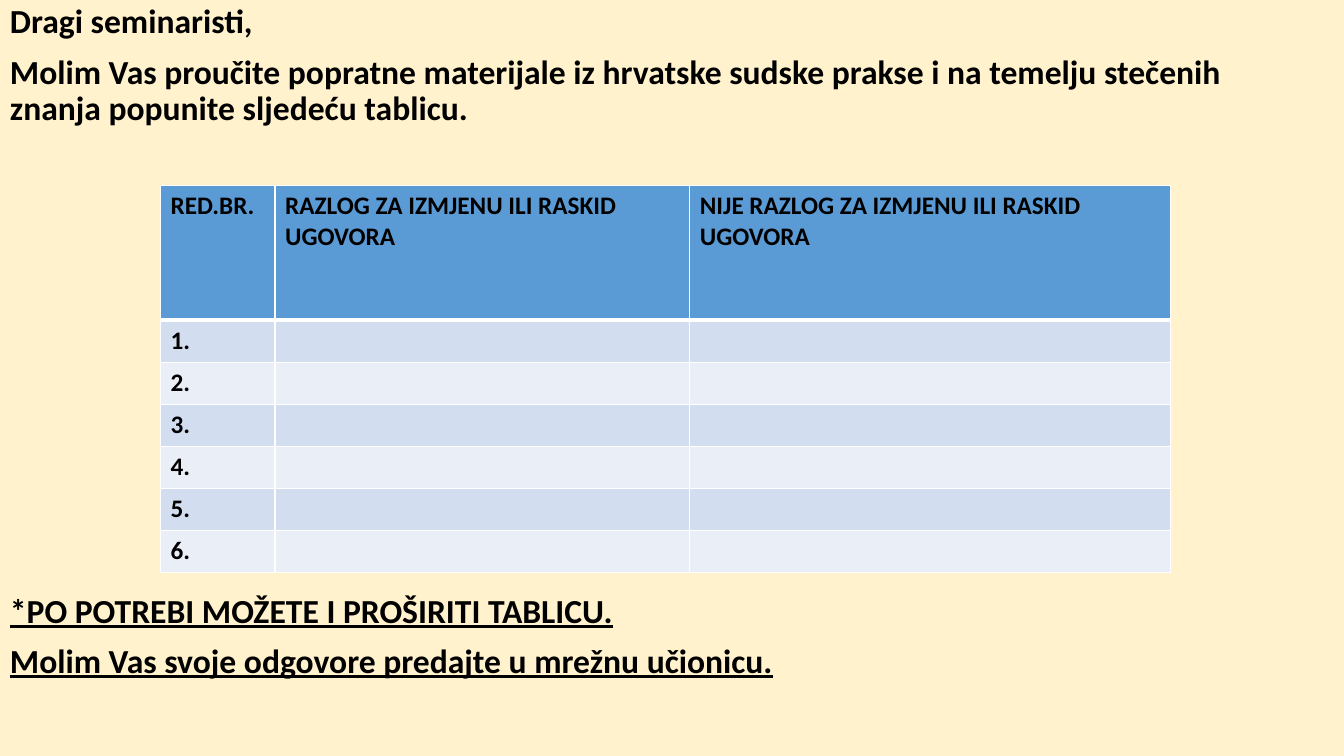
from dataclasses import dataclass

from lxml import etree
from pptx import Presentation
from pptx import util as u
from pptx.dml.color import RGBColor
from pptx.oxml.ns import qn

PX = 9525  # EMU per px, 96 px to the inch


@dataclass(frozen=True)
class Theme:
    font: str = "Calibri"
    ink: str = "000000"
    background: str = "FFF2CC"
    header: str = "5B9BD5"
    bands: tuple = ("D2DEEF", "EAEFF7")
    border: str = "FFFFFF"
    body_size: int = 24
    table_size: int = 18
    thin: int = 1
    thick: int = 3


class SlideBuilder:
    def __init__(self, page, theme):
        self.page = page
        self.theme = theme
        fill = page.background.fill
        fill.solid()
        fill.fore_color.rgb = RGBColor.from_string(theme.background)

    def style(self, para, size, underline=None):
        font = para.font
        font.name = self.theme.font
        font.size = u.Pt(size)
        font.bold = True
        font.underline = underline
        font.color.rgb = RGBColor.from_string(self.theme.ink)

    def text(self, left, top, width, height, lines, underline=None):
        box = self.page.shapes.add_textbox(*(n * PX for n in (left, top, width, height)))
        frame = box.text_frame
        frame.word_wrap = True
        frame.text = "\n".join(lines)
        for index, para in enumerate(frame.paragraphs):
            para.line_spacing = 0.9
            para.space_before = u.Pt(10 if index else 0)
            self.style(para, self.theme.body_size, underline)

    def borders(self, cell, top, bottom):
        """Draw all four sides, with the top and bottom widths in points."""
        thin = self.theme.thin
        properties = cell._tc.get_or_add_tcPr()
        for side, width in (("L", thin), ("R", thin), ("T", top), ("B", bottom)):
            line = etree.SubElement(properties, qn(f"a:ln{side}"), w=str(u.Pt(width)))
            fill = etree.SubElement(line, qn("a:solidFill"))
            etree.SubElement(fill, qn("a:srgbClr"), val=self.theme.border)

    def table(self, left, top, columns, rows, content):
        theme = self.theme
        size = (left, top, sum(columns), sum(rows))
        table = self.page.shapes.add_table(
            len(rows), len(columns), *(n * PX for n in size)).table
        for column, width in zip(table.columns, columns):
            column.width = width * PX
        for index, (row, height, words) in enumerate(zip(table.rows, rows, content)):
            row.height = height * PX
            color = theme.bands[(index - 1) % 2] if index else theme.header
            for cell, word in zip(row.cells, words):
                self.borders(cell,
                             theme.thick if index == 1 else theme.thin,
                             theme.thick if index == 0 else theme.thin)
                cell.fill.solid()
                cell.fill.fore_color.rgb = RGBColor.from_string(color)
                cell.text = word
                self.style(cell.text_frame.paragraphs[0], theme.table_size)


def main():
    deck = Presentation()
    deck.slide_width, deck.slide_height = 1280 * PX, 720 * PX
    builder = SlideBuilder(deck.slides.add_slide(deck.slide_layouts[6]), Theme())

    builder.text(0, 0, 1236, 130, [
        "Dragi seminaristi,",
        "Molim Vas proučite popratne materijale iz hrvatske sudske prakse "
        "i na temelju stečenih znanja popunite sljedeću tablicu.",
    ])
    headings = ["RED.BR.", "RAZLOG ZA IZMJENU ILI RASKID UGOVORA",
                "NIJE RAZLOG ZA IZMJENU ILI RASKID UGOVORA"]
    entries = [[f"{number}.", "", ""] for number in range(1, 7)]
    builder.table(153, 177, [109, 395, 458], [128] + [40] * len(entries),
                  [headings] + entries)
    builder.text(0, 561, 1236, 100, [
        "*PO POTREBI MOŽETE I PROŠIRITI TABLICU.",
        "Molim Vas svoje odgovore predajte u mrežnu učionicu.",
    ], underline=True)
    deck.save("out.pptx")


if __name__ == "__main__":
    main()
